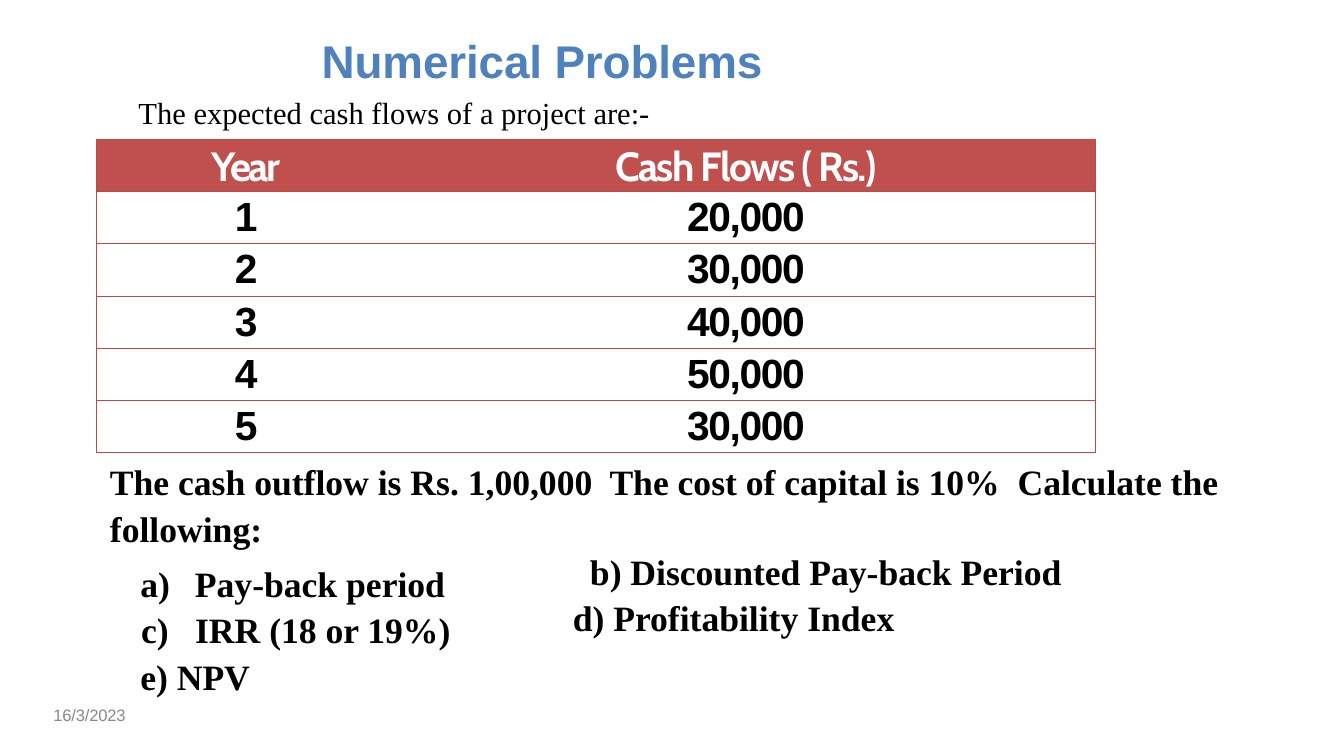
from lxml.etree import SubElement as Sub, Element as Elem
from pptx import Presentation as Deck
from pptx.dml.color import RGBColor as Rgb
from pptx.enum.text import MSO_ANCHOR as Anchor, PP_ALIGN as Align
from pptx.oxml.ns import qn
from pptx.util import Cm, Pt

RED = "C0504D"
EDGE = "BD4A47"
SERIF = {"name": "Times New Roman", "size": Pt(24), "bold": False}
BOLD = {"name": "Times New Roman", "size": Pt(28), "bold": True}
HEAD = {"name": "Arial", "size": Pt(36), "bold": True}
DATE = {"name": "Arial", "size": Pt(13), "bold": False}
TOP = {"name": "Cabin", "size": Pt(32), "bold": True}
CELL = {"name": "Arial", "size": Pt(32), "bold": True}
FLOWS = ["20,000", "30,000", "40,000", "50,000", "30,000"]


def color(code):
    return Rgb.from_string(code)


def apply(item, form):
    for key, value in form.items():
        setattr(item, key, value)


def write(para, text, font, ink="000000", space=0):
    run = para.add_run()
    run.text = text
    apply(run.font, font)
    run.font.color.rgb = color(ink)
    run._r.get_or_add_rPr().set("spc", str(round(space * 100)))


def indent(para, left, first=0):
    props = para._p.get_or_add_pPr()
    props.set("marL", str(Cm(left)))
    props.set("indent", str(Cm(first)))
    return props


def add_tab(para, stop):
    tabs = Sub(para._p.get_or_add_pPr(), qn("a:tabLst"))
    Sub(tabs, qn("a:tab"), pos=str(Cm(stop)), algn="l")


def add_frame(slide, box, top=0.03):
    frame = slide.shapes.add_textbox(*map(Cm, box)).text_frame
    apply(frame, {"word_wrap": True, "margin_left": 0, "margin_right": 0,
                  "margin_top": Cm(top), "margin_bottom": 0})
    return frame


def add_line(slide, box, text, font, ink="000000", space=0, **form):
    para = add_frame(slide, box).paragraphs[0]
    apply(para, {"space_before": Pt(1), **form})
    indent(para, 0.03)
    write(para, text, font, ink, space)


def add_tasks(slide, box):
    frame = add_frame(slide, box, 0.13)
    pay = frame.paragraphs[0]
    rate, net = frame.add_paragraph(), frame.add_paragraph()
    for para, text, gap in [(pay, "a)\t Pay-back period", 3.9),
                            (rate, "IRR (18 or 19%)", 2.9),
                            (net, "e) NPV", 2.9)]:
        para.space_before = Pt(gap)
        indent(para, 0.03)
        write(para, text, BOLD)
    add_tab(pay, 1.42)
    Sub(indent(rate, 1.55, -1.5), qn("a:buAutoNum"),
        type="alphaLcParenR", startAt="3")


def set_edges(cell, shown):
    props = cell._tc.get_or_add_tcPr()
    for spot, side in enumerate("LRTB"):
        line = Elem(qn("a:ln" + side), w=str(Pt(0.75)))
        if side in shown:
            fill = Sub(line, qn("a:solidFill"))
            Sub(fill, qn("a:srgbClr"), val=EDGE)
        else:
            Sub(line, qn("a:noFill"))
        props.insert(spot, line)


def add_grid(slide, box):
    rows = [("Year", "Cash Flows ( Rs.)")]
    rows += [(str(year), flow) for year, flow in enumerate(FLOWS, 1)]
    grid = slide.shapes.add_table(len(rows), 2, *map(Cm, box)).table
    apply(grid, {"first_row": False, "horz_banding": False})
    for col, share in zip(grid.columns, (0.3, 0.7)):
        col.width = Cm(box[2] * share)
    for r, row in enumerate(rows):
        font, ink, back, spaces = ((CELL, "000000", "FFFFFF", (0, -1.1)) if r
                                   else (TOP, "FFFFFF", RED, (-2, -1.3)))
        for c, text in enumerate(row):
            cell = grid.cell(r, c)
            apply(cell, {"margin_left": 0, "margin_right": 0,
                         "margin_top": Cm(0.09), "margin_bottom": 0,
                         "vertical_anchor": Anchor.TOP})
            cell.fill.solid()
            cell.fill.fore_color.rgb = color(back)
            set_edges(cell, "LR"[c] + "TB")
            para = cell.text_frame.paragraphs[0]
            para.alignment = Align.CENTER
            write(para, text, font, ink, spaces[c])


def add_page(deck):
    slide = deck.slides.add_slide(deck.slide_layouts[6])
    add_line(slide, (3.81, 2.57, 14.25, 1.09),
             "The expected cash flows of a project are:-", SERIF)
    add_line(slide, (3.02, 12.6, 31.19, 2.57),
             "The cash outflow is Rs. 1,00,000  The cost of capital is 10%"
             "  Calculate the following:", BOLD, line_spacing=1.1)
    add_line(slide, (16.08, 15.21, 19.91, 1.24),
             " b) Discounted Pay-back Period", BOLD)
    add_tasks(slide, (3.86, 15.44, 10.95, 3.94))
    add_line(slide, (15.85, 16.48, 14.66, 1.24),
             "d) Profitability Index", BOLD)
    add_grid(slide, (2.67, 3.86, 27.71, 8.7))
    add_line(slide, (8.89, 0.89, 24.56, 1.57),
             "Numerical Problems", HEAD, "4F81BD", -0.1)
    add_line(slide, (1.45, 19.53, 2.79, 0.53), "16/3/2023", DATE,
             "888888", -0.1, space_before=Pt(0), line_spacing=Pt(15.3))


def main():
    deck = Deck()
    apply(deck, {"slide_width": Cm(37.26), "slide_height": Cm(20.96)})
    add_page(deck)
    deck.save("out.pptx")


if __name__ == "__main__":
    main()
